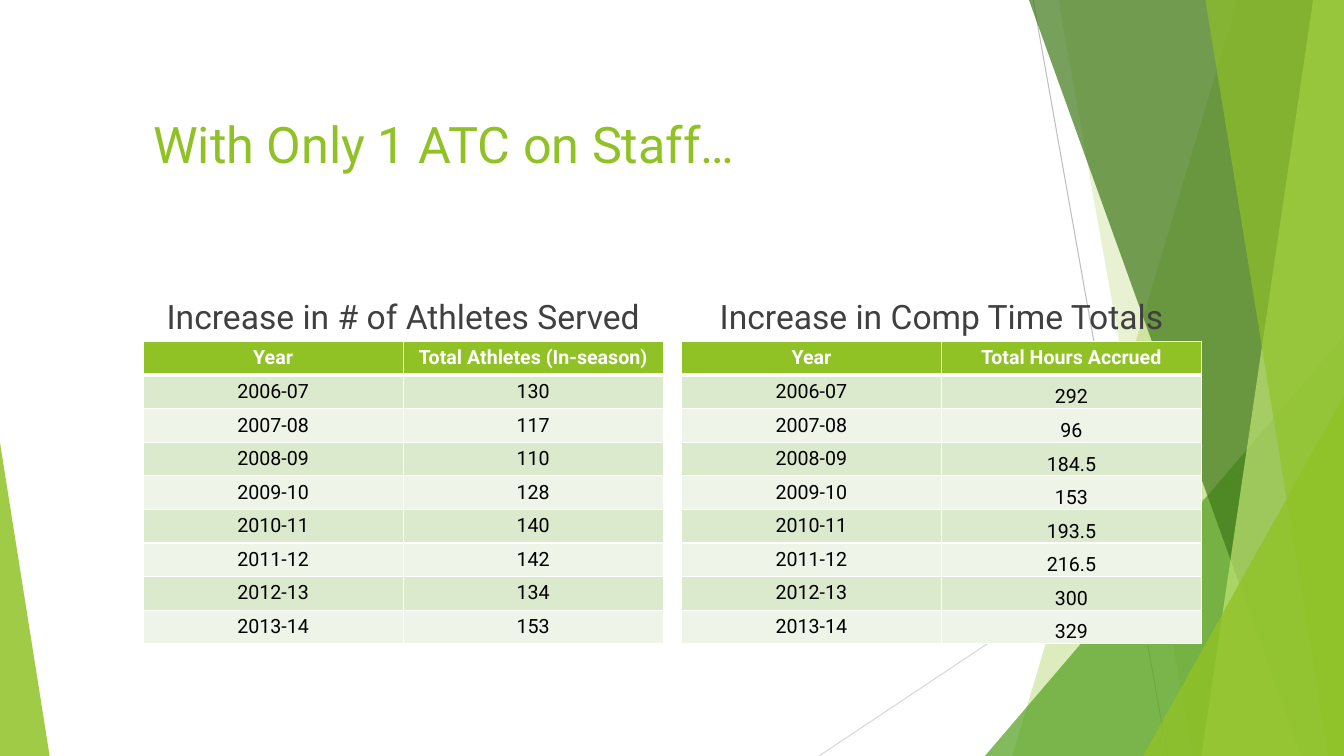
from lxml import etree
from pptx import Presentation
from pptx.dml.color import RGBColor
from pptx.enum.shapes import MSO_CONNECTOR, MSO_SHAPE
from pptx.enum.text import MSO_ANCHOR, MSO_AUTO_SIZE, PP_ALIGN
from pptx.oxml.ns import qn
from pptx.util import Pt

STRAIGHT = MSO_CONNECTOR.STRAIGHT
TRIANGLE = MSO_SHAPE.ISOSCELES_TRIANGLE
TOP, BOTTOM = MSO_ANCHOR.TOP, MSO_ANCHOR.BOTTOM
LEFT, CENTER = PP_ALIGN.LEFT, PP_ALIGN.CENTER
NO_AUTOFIT = MSO_AUTO_SIZE.NONE

FONT = "Roboto"
WIDTH, HEIGHT = 960, 540
COMPARISON_LAYOUT = 4
GREEN, WHITE = "90C226", "FFFFFF"
BAND_COLORS = ("EEF4E8", "DBE9CD")
TABLE_WIDTH, ROW_HEIGHT = 371.5, 24
COLUMN_LEFTS = (102.25, 486.75)

# Slanted bands to the right edge: top x, bottom x, colour, opacity in percent
BACK_BANDS = [(884, 723, GREEN, 30), (756, 852, GREEN, 20)]
FRONT_BANDS = [(735, 929.5, "3F7819", 70), (938, 858.25, "C0E474", 70),
               (861, 949, GREEN, 65)]

YEARS = ["2006-07", "2007-08", "2008-09", "2009-10",
         "2010-11", "2011-12", "2012-13", "2013-14"]
ATHLETES = ["130", "117", "110", "128", "140", "142", "134", "153"]
HOURS = ["292", "96", "184.5", "153", "193.5", "216.5", "300", "329"]


def rgb(color):
    return RGBColor.from_string(color)


def style_paragraph(paragraph, size, color, alignment, bold=False):
    paragraph.alignment = alignment
    font = paragraph.font
    font.name, font.size, font.bold = FONT, Pt(size), bold
    font.color.rgb = rgb(color)


# Background decoration
def paint(shape, color, opacity):
    shape.shadow.inherit = False
    shape.fill.solid()
    shape.fill.fore_color.rgb = rgb(color)
    shape.line.fill.background()
    color_element = shape.fill._xPr.find(qn("a:solidFill"))[0]
    etree.SubElement(color_element, qn("a:alpha"), val=str(opacity * 1000))


def add_line(slide, start, end, color):
    line = slide.shapes.add_connector(STRAIGHT, *map(Pt, start + end))
    line.line.color.rgb = rgb(color)
    line.line.width = Pt(0.75)
    etree.SubElement(line._element.spPr, qn("a:effectLst"))


def add_band(slide, top_x, bottom_x, color, opacity):
    builder = slide.shapes.build_freeform(Pt(top_x), Pt(0))
    corners = [(WIDTH, 0), (WIDTH, HEIGHT), (bottom_x, HEIGHT)]
    builder.add_line_segments([(Pt(x), Pt(y)) for x, y in corners])
    paint(builder.convert_to_shape(), color, opacity)


def add_corner_triangle(slide, left, top, width, apex, color, opacity):
    shape = slide.shapes.add_shape(
        TRIANGLE, Pt(left), Pt(top), Pt(width), Pt(HEIGHT - top))
    shape.adjustments[0] = apex
    paint(shape, color, opacity)


def add_decoration(slide):
    add_line(slide, (738, 0), (834, HEIGHT), "BFBFBF")
    add_line(slide, (WIDTH, 290), (585, HEIGHT), "D9D9D9")
    for band in BACK_BANDS:
        add_band(slide, *band)
    add_corner_triangle(slide, 703.5, 240, 256.5, 1, "54A021", 72)
    for band in FRONT_BANDS:
        add_band(slide, *band)
    add_corner_triangle(slide, 816.5, 283, 143.5, 1, GREEN, 80)
    add_corner_triangle(slide, 0, 316, 35.5, 0, GREEN, 85)


# Title and headings
def fill_placeholder(slide, index, text, box, size, color, alignment, anchor):
    shape = slide.placeholders[index]
    shape.left, shape.top, shape.width, shape.height = map(Pt, box)
    frame = shape.text_frame
    frame.text = text
    frame.auto_size = NO_AUTOFIT
    frame.vertical_anchor = anchor
    paragraph = frame.paragraphs[0]
    style_paragraph(paragraph, size, color, alignment)
    # Bring the text in front of the decoration
    slide.shapes._spTree.append(shape._element)
    return paragraph


def add_heading(slide, index, text, left):
    paragraph = fill_placeholder(
        slide, index, text, (left, 209.5, TABLE_WIDTH, 34.5),
        24, "404040", CENTER, BOTTOM)
    paragraph.space_before = Pt(10)


# Tables
def set_borders(cell, top, bottom):
    properties = cell._tc.get_or_add_tcPr()
    for side, width in (("L", 1), ("R", 1), ("T", top), ("B", bottom)):
        border = etree.SubElement(
            properties, qn("a:ln" + side), w=str(Pt(width)))
        fill = etree.SubElement(border, qn("a:solidFill"))
        etree.SubElement(fill, qn("a:srgbClr"), val=WHITE)


def format_cell(cell, text, row):
    header = row == 0
    set_borders(cell, 3 if row == 1 else 1, 3 if header else 1)
    cell.fill.solid()
    cell.fill.fore_color.rgb = rgb(GREEN if header else BAND_COLORS[row % 2])
    cell.text = text
    style_paragraph(cell.text_frame.paragraphs[0], 14,
                    WHITE if header else "000000", CENTER, header)


def add_yearly_table(slide, left, value_title, values, values_at_bottom=False):
    rows = [("Year", value_title), *zip(YEARS, values)]
    table = slide.shapes.add_table(
        len(rows), 2, Pt(left), Pt(244), Pt(TABLE_WIDTH),
        Pt(ROW_HEIGHT * len(rows))).table
    for row, texts in enumerate(rows):
        for column, text in enumerate(texts):
            format_cell(table.cell(row, column), text, row)
        if values_at_bottom and row > 0:
            cell = table.cell(row, 1)
            cell.vertical_anchor = BOTTOM
            cell.margin_left = cell.margin_right = cell.margin_top = Pt(0.75)
            cell.margin_bottom = Pt(0)


def main():
    presentation = Presentation()
    presentation.slide_width = Pt(WIDTH)
    presentation.slide_height = Pt(HEIGHT)
    slide = presentation.slides.add_slide(
        presentation.slide_layouts[COMPARISON_LAYOUT])
    for index in (2, 4):
        content = slide.placeholders[index]._element
        content.getparent().remove(content)

    add_decoration(slide)
    first_left, second_left = COLUMN_LEFTS
    fill_placeholder(slide, 0, "With Only 1 ATC on Staff…",
                     (first_left, 77, 756, 85.5), 36, GREEN, LEFT, TOP)
    add_heading(slide, 1, "Increase in # of Athletes Served", first_left)
    add_yearly_table(slide, first_left, "Total Athletes (In-season)", ATHLETES)
    add_heading(slide, 3, "Increase in Comp Time Totals", second_left)
    add_yearly_table(slide, second_left, "Total Hours Accrued", HOURS,
                     values_at_bottom=True)
    presentation.save("out.pptx")


if __name__ == "__main__":
    main()
